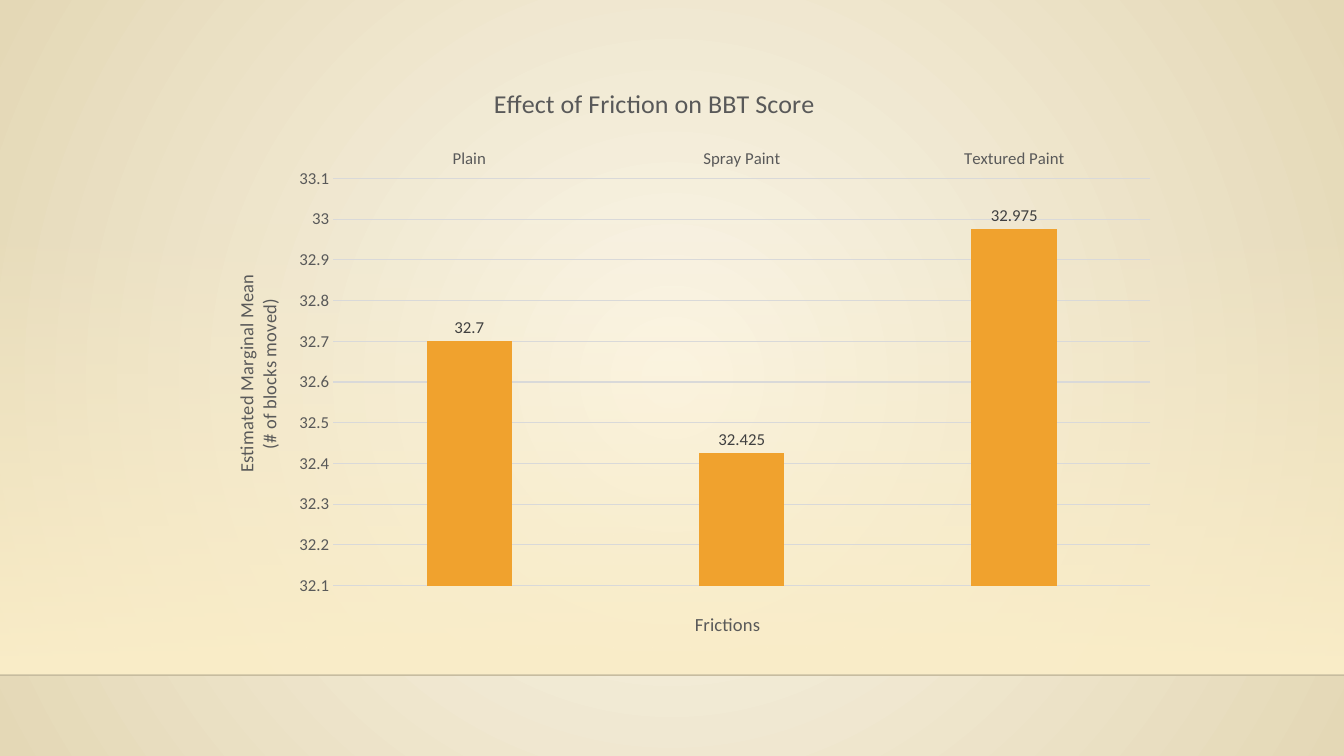
from dataclasses import dataclass

from lxml.etree import SubElement
from pptx import Presentation
from pptx.chart.data import CategoryChartData
from pptx.dml.color import RGBColor
from pptx.enum.chart import XL_CHART_TYPE as ChartType
from pptx.enum.chart import XL_LABEL_POSITION as LabelPos
from pptx.enum.chart import XL_TICK_LABEL_POSITION as TickLabelPos
from pptx.enum.chart import XL_TICK_MARK as TickMark
from pptx.enum.shapes import MSO_CONNECTOR as Connector
from pptx.enum.shapes import MSO_SHAPE as Shape
from pptx.oxml import parse_xml
from pptx.oxml.ns import nsdecls, qn
from pptx.util import Inches, Pt


@dataclass(frozen=True)
class Theme:
    font: str = "Calibri"
    text: str = "595959"
    label: str = "404040"
    grid: str = "D9D9D9"
    bar: str = "F0A22E"
    center: str = "FBF6E9"
    edge: str = "E4D8B6"
    glow: str = "FBEEC9"
    horizon: str = "000001"
    title_size: float = 18.6
    axis_title_size: float = 13.3
    tick_size: float = 12


THEME = Theme()
WIDTH, HEIGHT = Inches(13.33), Inches(7.5)
HORIZON = 0.893
GLOW_TOP = 0.295
CHART_BOX = (0.105, 0.085, 0.764, 0.764)
PLOT_BOX = (0.187, 0.2, 0.796, 0.712)
SCORES = {"Plain": 32.7, "Spray Paint": 32.425, "Textured Paint": 32.975}


def share(x, y, w, h):
    return int(x * WIDTH), int(y * HEIGHT), int(w * WIDTH), int(h * HEIGHT)


def gradient(stops, direction):
    gs = "".join(
        f'<a:gs pos="{pos}"><a:srgbClr val="{color}"><a:alpha val="{alpha}"/></a:srgbClr></a:gs>'
        for pos, color, alpha in stops
    )
    return parse_xml(
        f'<a:gradFill {nsdecls("a")} rotWithShape="1"><a:gsLst>{gs}</a:gsLst>{direction}</a:gradFill>'
    )


def set_gradient(fill, parent, stops, direction):
    fill.gradient()
    old = parent.find(qn("a:gradFill"))
    parent.replace(old, gradient(stops, direction))


def style_font(font, size, color):
    font.name = THEME.font
    font.size = Pt(size)
    font.bold = False
    font.color.rgb = RGBColor.from_string(color)


def style_line(line, color, width):
    line.color.rgb = RGBColor.from_string(color)
    line.width = Pt(width)


def add_background(slide):
    fill = slide.background.fill
    bg_pr = slide.element.cSld.find(qn("p:bg")).find(qn("p:bgPr"))
    radial = '<a:path path="circle"><a:fillToRect l="50000" t="50000" r="50000" b="50000"/></a:path>'
    stops = [(0, THEME.center, 100000), (100000, THEME.edge, 100000)]
    set_gradient(fill, bg_pr, stops, radial)


def add_glow(slide):
    sp = slide.shapes.add_shape(Shape.RECTANGLE, *share(0, GLOW_TOP, 1, HORIZON - GLOW_TOP))
    sp.shadow.inherit = False
    sp.line.fill.background()
    stops = [(0, THEME.glow, 0), (100000, THEME.glow, 100000)]
    set_gradient(sp.fill, sp.element.spPr, stops, '<a:lin ang="5400000" scaled="0"/>')


def add_horizon(slide):
    y = int(HORIZON * HEIGHT)
    line = slide.shapes.add_connector(Connector.STRAIGHT, 0, y, WIDTH, y)
    style_line(line.line, THEME.horizon, 1)
    sp_pr = line.element.spPr
    color = next(sp_pr.iter(qn("a:srgbClr")))
    SubElement(color, qn("a:alpha")).set("val", "20000")
    SubElement(sp_pr, qn("a:effectLst"))


def place(element, values, inner=False):
    old = element.find(qn("c:layout"))
    if old is not None:
        element.remove(old)
    target = '<c:layoutTarget val="inner"/>' if inner else ""
    keys = "xywh"[: len(values)]
    modes = "".join(f'<c:{k}Mode val="edge"/>' for k in keys[:2])
    sizes = "".join(f'<c:{k} val="{v}"/>' for k, v in zip(keys, values))
    layout = parse_xml(
        f'<c:layout {nsdecls("c")}><c:manualLayout>{target}{modes}{sizes}</c:manualLayout></c:layout>'
    )
    tx = element.find(qn("c:tx"))
    element.insert(0 if tx is None else element.index(tx) + 1, layout)


def set_title(owner, text, size):
    tf = (owner.chart_title if hasattr(owner, "chart_title") else owner.axis_title).text_frame
    tf.text = text
    for p in tf.paragraphs:
        style_font(p.font, size, THEME.text)
    return tf


def style_axis(axis, title, position):
    axis.major_tick_mark = axis.minor_tick_mark = TickMark.NONE
    style_font(axis.tick_labels.font, THEME.tick_size, THEME.text)
    set_title(axis, title, THEME.axis_title_size)
    place(axis.axis_title._element, position)


def add_score_chart(slide):
    data = CategoryChartData()
    data.categories = list(SCORES)
    data.add_series("Series 1", list(SCORES.values()))
    chart = slide.shapes.add_chart(ChartType.COLUMN_CLUSTERED, *share(*CHART_BOX), data).chart
    chart.has_legend = False
    style_font(chart.font, 10, "000000")
    set_title(chart, "Effect of Friction on BBT Score", THEME.title_size)
    place(chart._chartSpace.chart.plotArea, PLOT_BOX, inner=True)

    cat = chart.category_axis
    style_axis(cat, "Frictions", (0.536, 0.951))
    cat.tick_label_position = TickLabelPos.HIGH
    style_line(cat.format.line, THEME.grid, 0.75)

    val = chart.value_axis
    style_axis(val, "Estimated Marginal Mean\n(# of blocks moved)", (0.087, 0.366))
    val.minimum_scale, val.maximum_scale, val.major_unit = 32.1, 33.1, 0.1
    val.format.line.fill.background()
    style_line(val.major_gridlines.format.line, THEME.grid, 0.75)

    plot = chart.plots[0]
    plot.gap_width, plot.overlap, plot.vary_by_categories = 219, -27, False
    series = plot.series[0]
    series.format.fill.solid()
    series.format.fill.fore_color.rgb = RGBColor.from_string(THEME.bar)
    labels = series.data_labels
    labels.show_value = True
    labels.position = LabelPos.OUTSIDE_END
    style_font(labels.font, THEME.tick_size, THEME.label)


def main():
    prs = Presentation()
    prs.slide_width, prs.slide_height = WIDTH, HEIGHT
    slide = prs.slides.add_slide(prs.slide_layouts[6])
    add_background(slide)
    add_glow(slide)
    add_horizon(slide)
    add_score_chart(slide)
    prs.save("out.pptx")


if __name__ == "__main__":
    main()
